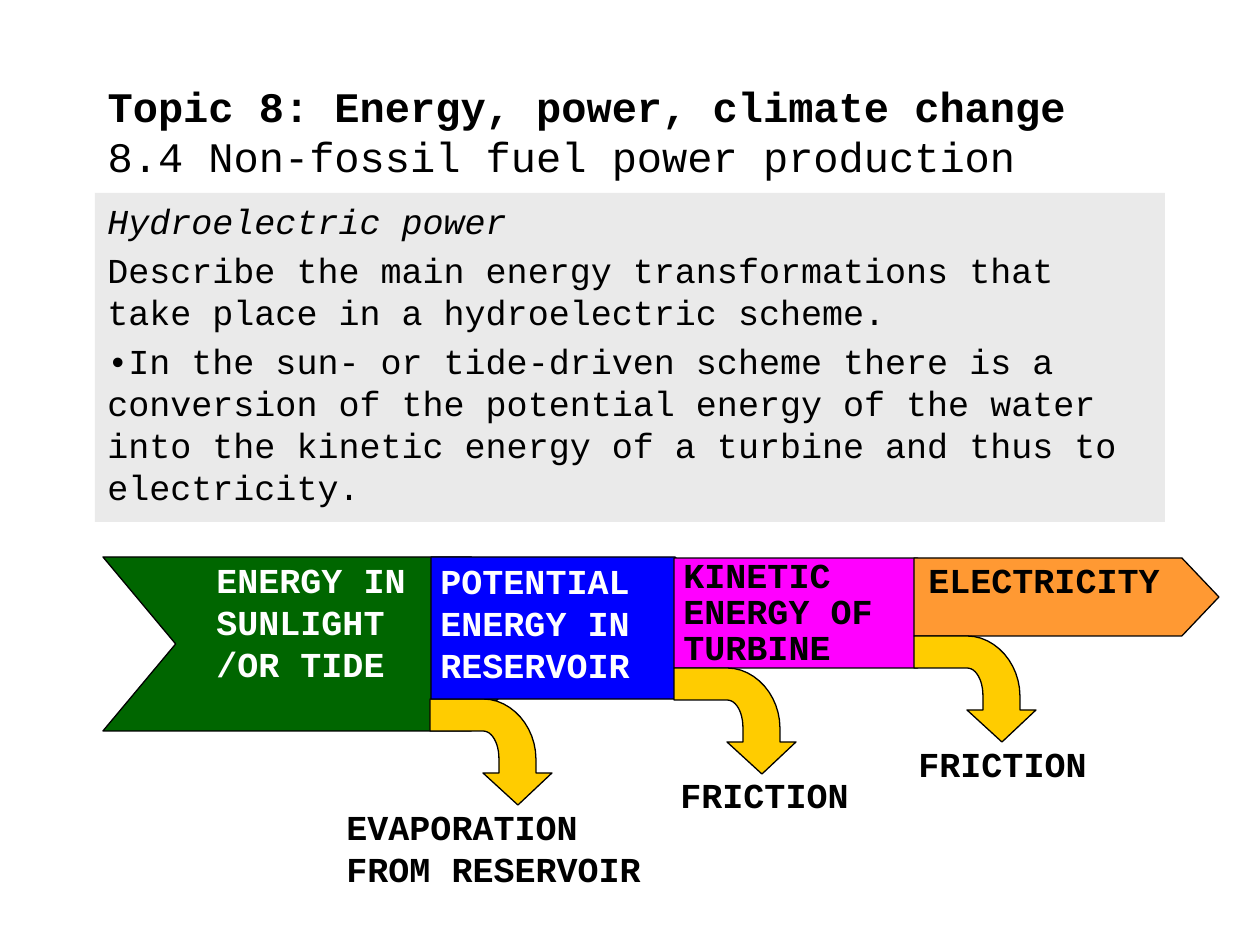
from dataclasses import dataclass

from pptx import Presentation
from pptx.dml.color import RGBColor
from pptx.enum.shapes import MSO_SHAPE as Shape
from pptx.enum.text import MSO_ANCHOR as Anchor, MSO_AUTO_SIZE as AutoSize, PP_ALIGN as Align
from pptx.util import Pt

EMU_PER_PX = 914400 / 126


@dataclass(frozen=True)
class Theme:
    font: str = "Courier New"
    title_size: int = 24
    text_size: int = 20
    black: str = "000000"
    white: str = "FFFFFF"
    panel: str = "EAEAEA"
    sunlight: str = "006600"
    reservoir: str = "0000FF"
    turbine: str = "FF00FF"
    electricity: str = "FF9933"
    loss: str = "FFCC00"


THEME = Theme()


@dataclass(frozen=True)
class Box:
    x: int
    y: int
    w: int
    h: int

    def emu(self) -> tuple[int, ...]:
        return tuple(px(v) for v in (self.x, self.y, self.w, self.h))


@dataclass(frozen=True)
class Label:
    text: str
    box: Box
    color: str = THEME.black
    line_spacing: float = 1.0


@dataclass(frozen=True)
class Stage:
    shape: Shape
    box: Box
    point: float
    fill: str
    label: Label


@dataclass(frozen=True)
class Loss:
    x: int
    y: int
    label: Label


PLATE = Shape.PENTAGON
FLOW: list[Stage | Loss] = [
    Stage(Shape.CHEVRON, Box(103, 557, 441, 174), 0.418, THEME.sunlight,
          Label("ENERGY IN SUNLIGHT /OR TIDE", Box(204, 552, 223, 139), THEME.white)),
    Loss(430, 699, Label("EVAPORATION FROM RESERVOIR", Box(334, 799, 344, 97))),
    Stage(PLATE, Box(431, 557, 325, 142), 0.571, THEME.reservoir,
          Label("POTENTIAL ENERGY IN RESERVOIR", Box(428, 553, 223, 139), THEME.white)),
    Stage(PLATE, Box(674, 558, 325, 110), 0.742, THEME.turbine,
          Label("KINETIC ENERGY OF TURBINE", Box(671, 554, 223, 120), line_spacing=0.85)),
    Loss(674, 668, Label("FRICTION", Box(668, 767, 209, 54))),
    Stage(PLATE, Box(914, 558, 305, 78), 0.475, THEME.electricity,
          Label("ELECTRICITY", Box(916, 552, 285, 54))),
    Loss(914, 636, Label("FRICTION", Box(906, 736, 209, 54))),
]


def px(value: float) -> int:
    return round(value * EMU_PER_PX)


def curve(*control: tuple[int, int], steps: int = 12) -> list[tuple[float, float]]:
    """Points along a cubic Bezier curve, both ends included."""
    points = []
    for i in range(steps + 1):
        t = i / steps
        weights = ((1 - t) ** 3, 3 * t * (1 - t) ** 2, 3 * t * t * (1 - t), t ** 3)
        points.append(tuple(sum(w * c[axis] for w, c in zip(weights, control))
                            for axis in (0, 1)))
    return points


BENT_ARROW = [
    (88, 106), (122, 74), (106, 74),
    *curve((106, 60), (106, 28), (82, 0), (53, 0)),
    (0, 0), (0, 32),
    *curve((53, 32), (62, 32), (69, 44), (69, 60)),
    (69, 74), (53, 74),
]


def paint(sp, fill: str, outlined: bool = True) -> None:
    sp.shadow.inherit = False
    sp.fill.solid()
    sp.fill.fore_color.rgb = RGBColor.from_string(fill)
    if outlined:
        sp.line.color.rgb = RGBColor.from_string(THEME.black)
        sp.line.width = Pt(0.75)
    else:
        sp.line.fill.background()


def style(p, size: int, color: str = THEME.black) -> None:
    p.alignment = Align.LEFT
    p.font.name = THEME.font
    p.font.size = Pt(size)
    p.font.color.rgb = RGBColor.from_string(color)


def add_title(s, box: Box, topic: str, section: str) -> None:
    title = s.shapes.title
    title.left, title.top, title.width, title.height = box.emu()
    tf = title.text_frame
    tf.auto_size = AutoSize.NONE
    tf.vertical_anchor = Anchor.MIDDLE
    p = tf.paragraphs[0]
    style(p, THEME.title_size)
    r = p.add_run()
    r.text, r.font.bold = topic, True
    p.add_line_break()
    r = p.add_run()
    r.text, r.font.bold = section, False


def add_panel(s, box: Box, heading: str, *body: str) -> None:
    sp = s.shapes.add_shape(Shape.RECTANGLE, *box.emu())
    paint(sp, THEME.panel, outlined=False)
    tf = sp.text_frame
    tf.word_wrap = True
    tf.vertical_anchor = Anchor.TOP
    tf.text = "\n".join((heading, *body))
    for p in tf.paragraphs:
        style(p, THEME.text_size)
        p.space_before = Pt(4)
    tf.paragraphs[0].font.italic = True


def add_label(s, label: Label) -> None:
    tf = s.shapes.add_textbox(*label.box.emu()).text_frame
    tf.word_wrap = True
    tf.text = label.text
    p = tf.paragraphs[0]
    style(p, THEME.text_size, label.color)
    p.font.bold = True
    p.line_spacing = label.line_spacing


def add_stage(s, stage: Stage) -> None:
    sp = s.shapes.add_shape(stage.shape, *stage.box.emu())
    sp.adjustments[0] = stage.point
    paint(sp, stage.fill)
    add_label(s, stage.label)


def add_loss(s, loss: Loss) -> None:
    points = [(px(loss.x + x), px(loss.y + y)) for x, y in BENT_ARROW]
    builder = s.shapes.build_freeform(*points[0])
    builder.add_line_segments(points[1:], close=True)
    paint(builder.convert_to_shape(), THEME.loss)
    add_label(s, loss.label)


def main() -> None:
    prs = Presentation()
    prs.slide_width, prs.slide_height = px(1260), px(945)
    s = prs.slides.add_slide(prs.slide_layouts[5])
    add_panel(
        s, Box(95, 193, 1070, 329),
        "Hydroelectric power",
        "Describe the main energy transformations that take place in a hydroelectric scheme.",
        "•In the sun- or tide-driven scheme there is a conversion of the potential energy "
        "of the water into the kinetic energy of a turbine and thus to electricity.",
    )
    add_title(s, Box(95, 73, 1070, 115),
              "Topic 8: Energy, power, climate change", "8.4 Non-fossil fuel power production")
    for part in FLOW:
        if isinstance(part, Stage):
            add_stage(s, part)
        else:
            add_loss(s, part)
    prs.save("out.pptx")


if __name__ == "__main__":
    main()
